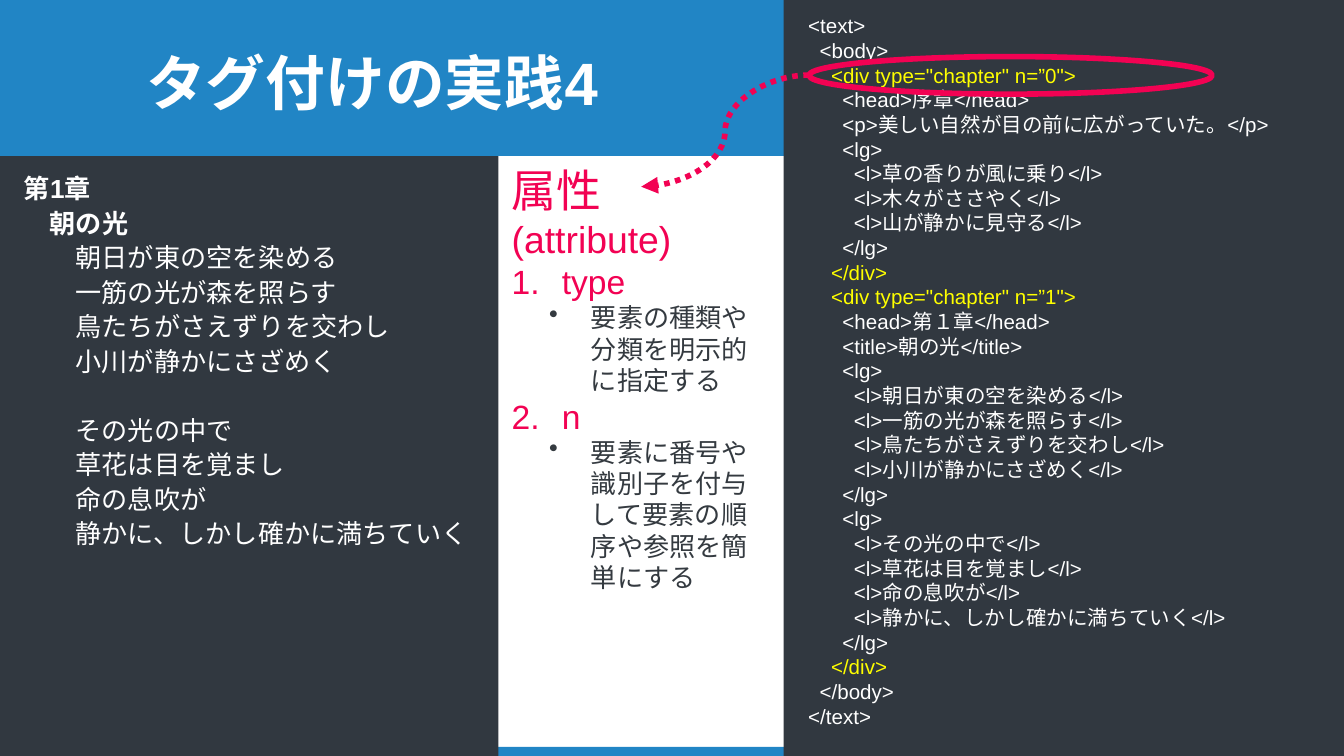
from lxml import etree
from pptx import Presentation
from pptx.dml.color import RGBColor
from pptx.enum.dml import MSO_LINE
from pptx.enum.shapes import MSO_CONNECTOR, MSO_SHAPE
from pptx.enum.text import MSO_ANCHOR, MSO_AUTO_SIZE, PP_ALIGN
from pptx.oxml.ns import qn
from pptx.util import Cm, Pt

RECTANGLE, OVAL = MSO_SHAPE.RECTANGLE, MSO_SHAPE.OVAL
CURVE, DOTTED = MSO_CONNECTOR.CURVE, MSO_LINE.ROUND_DOT
TOP, LEFT = MSO_ANCHOR.TOP, PP_ALIGN.LEFT
FIXED, GROW = MSO_AUTO_SIZE.NONE, MSO_AUTO_SIZE.SHAPE_TO_FIT_TEXT

BLUE, DARK, GRAY, PINK = "2185C5", "313840", "343A40", "F20253"
WHITE, YELLOW = "FFFFFF", "FFFF00"
HEADER_HEIGHT = 2.95
POEM_WIDTH = 9.42
CODE_LEFT = 14.81

CODE = """\
  <text>
    <body>
      <div type="chapter" n=”0">
        <head>序章</head>
        <p>美しい自然が目の前に広がっていた。</p>
        <lg>
          <l>草の香りが風に乗り</l>
          <l>木々がささやく</l>
          <l>山が静かに見守る</l>
        </lg>
      </div>
      <div type="chapter" n=”1">
        <head>第１章</head>
        <title>朝の光</title>
        <lg>
          <l>朝日が東の空を染める</l>
          <l>一筋の光が森を照らす</l>
          <l>鳥たちがさえずりを交わし</l>
          <l>小川が静かにさざめく</l>
        </lg>
        <lg>
          <l>その光の中で</l>
          <l>草花は目を覚まし</l>
          <l>命の息吹が</l>
          <l>静かに、しかし確かに満ちていく</l>
        </lg>
      </div>
    </body>
  </text>"""

# Text, indent level, space before in points
POEM = [
    ("第1章", 0, 0),
    ("朝の光", 1, 0),
    ("朝日が東の空を染める", 2, 0),
    ("一筋の光が森を照らす", 2, 0),
    ("鳥たちがさえずりを交わし", 2, 0),
    ("小川が静かにさざめく", 2, 0),
    ("その光の中で", 2, 18.5),
    ("草花は目を覚まし", 2, 0),
    ("命の息吹が", 2, 0),
    ("静かに、しかし確かに満ちていく", 2, 0),
]

ATTRIBUTES = [
    ("type", "要素の種類や分類を明示的に指定する"),
    ("n", "要素に番号や識別子を付与して要素の順序や参照を簡単にする"),
]


def color(target, hex_color):
    """Give a fill or line a solid colour, or a font its colour."""
    if hasattr(target, "solid"):
        target.solid()
        target.fore_color.rgb = RGBColor.from_string(hex_color)
    else:
        target.color.rgb = RGBColor.from_string(hex_color)


def format_paragraph(para, size, hex_color, bold=False, left=0, hanging=0,
                     bullet="buNone", **bullet_attributes):
    """Set bullet, indents (in cm) and the font of every run."""
    properties = para._p.get_or_add_pPr()
    properties.set("marL", str(Cm(left)))
    properties.set("indent", str(-Cm(hanging)))
    etree.SubElement(properties, qn(f"a:{bullet}"), bullet_attributes)
    para.alignment = LEFT
    para.space_before = Pt(0)
    for span in para.runs:
        span.font.size = Pt(size)
        span.font.bold = bold
        span.font.name = "Arial"
        color(span.font, hex_color)
        for script in ("a:ea", "a:cs"):
            etree.SubElement(span.font._element, qn(script), typeface="Arial")


deck = Presentation()
deck.slide_width, deck.slide_height = Cm(25.4), Cm(14.29)
page = deck.slides.add_slide(deck.slide_layouts[3])
title, code_panel, poem_panel = page.placeholders

# Blue bands behind the placeholders
for left, top, width, height in [(0, 0, 25.4, HEADER_HEIGHT),
                                 (2.49, 14.12, 17.96, 0.17)]:
    band = page.shapes.add_shape(RECTANGLE, Cm(left), Cm(top), Cm(width), Cm(height))
    band.shadow.inherit = False
    color(band.fill, BLUE)
    band.line.fill.background()
    page.shapes._spTree.insert(2, band._element)

# Placeholders
for holder, left, top, width, height in [
    (title, 2.51, 0.61, 21.62, 2.34),
    (code_panel, CODE_LEFT, 0, 25.4 - CODE_LEFT, 14.29),
    (poem_panel, 0, HEADER_HEIGHT, POEM_WIDTH, 14.29 - HEADER_HEIGHT),
]:
    holder.left, holder.top = Cm(left), Cm(top)
    holder.width, holder.height = Cm(width), Cm(height)
    frame = holder.text_frame
    frame.word_wrap = True
    frame.auto_size = FIXED
    frame.vertical_anchor = TOP
    frame.margin_left = frame.margin_right = Cm(0.25)
    frame.margin_top = frame.margin_bottom = Cm(0.25)

title.text_frame.text = "タグ付けの実践4"
format_paragraph(title.text_frame.paragraphs[0], 32, WHITE, bold=True)

color(code_panel.fill, DARK)
code_panel.text_frame.text = CODE
for para in code_panel.text_frame.paragraphs:
    format_paragraph(para, 11, YELLOW if "div" in para.text else WHITE)

color(poem_panel.fill, DARK)
poem_panel.text_frame.text = "\n".join(text for text, level, gap in POEM)
for para, (text, level, gap) in zip(poem_panel.text_frame.paragraphs, POEM):
    format_paragraph(para, 14, WHITE, bold=level < 2, left=0.2 + 0.49 * level)
    para.line_spacing = 1.1
    para.space_before = Pt(gap)

# Explanation of the attributes
box = page.shapes.add_textbox(Cm(POEM_WIDTH), Cm(HEADER_HEIGHT), Cm(5.41), Cm(8.46))
frame = box.text_frame
frame.word_wrap = True
frame.auto_size = GROW
heading = frame.paragraphs[0]
heading.text = "属性\v(attribute)"
format_paragraph(heading, 24, PINK)
heading.runs[1].font.size = Pt(20)
for name, meaning in ATTRIBUTES:
    para = frame.add_paragraph()
    para.text = name
    format_paragraph(para, 18, PINK, left=0.95, hanging=0.95,
                     bullet="buAutoNum", type="arabicPeriod")
    para = frame.add_paragraph()
    para.text = meaning
    para.level = 1
    format_paragraph(para, 14, GRAY, left=1.5, hanging=0.79,
                     bullet="buChar", char="•")

# Ring around the tag and arrow to its explanation
ring = page.shapes.add_shape(OVAL, Cm(15.29), Cm(1.07), Cm(7.62), Cm(0.71))
ring.shadow.inherit = False
ring.fill.background()
arrow = page.shapes.add_connector(CURVE, Cm(15.29), Cm(1.42), Cm(12.12), Cm(3.53))
etree.SubElement(arrow._element.spPr, qn("a:effectLst"))
for outlined in (ring, arrow):
    color(outlined.line.fill, PINK)
    outlined.line.width = Pt(3)
arrow.line.dash_style = DOTTED
etree.SubElement(arrow.line._get_or_add_ln(), qn("a:tailEnd"), type="triangle")

deck.save("out.pptx")
